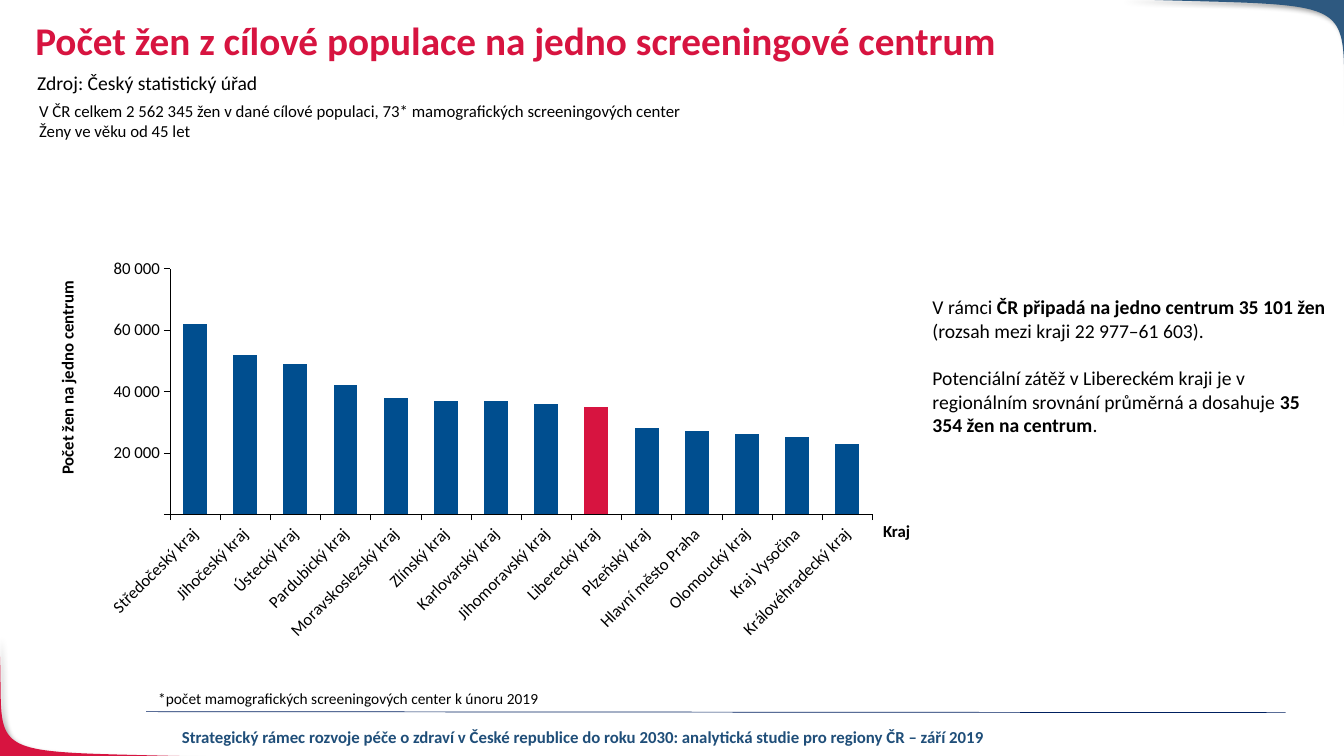
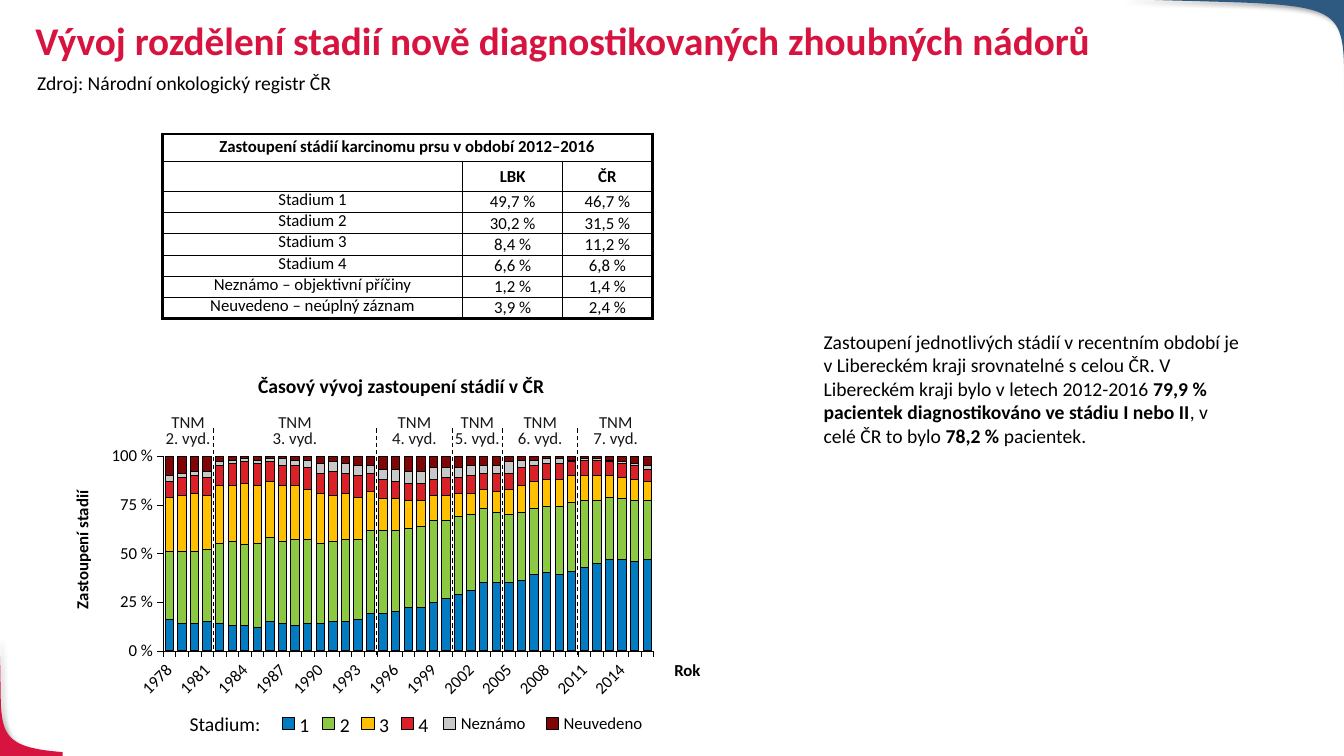
from lxml import etree
from pptx import Presentation
from pptx.chart.data import CategoryChartData
from pptx.dml.color import RGBColor
from pptx.enum.chart import XL_CHART_TYPE, XL_TICK_MARK
from pptx.enum.dml import MSO_LINE
from pptx.enum.shapes import MSO_CONNECTOR, MSO_SHAPE
from pptx.enum.text import MSO_ANCHOR, PP_ALIGN
from pptx.oxml import parse_xml
from pptx.oxml.ns import nsdecls, qn
from pptx.util import Inches, Pt

LEFT, CENTER = PP_ALIGN.LEFT, PP_ALIGN.CENTER
TOP, MIDDLE, BOTTOM = MSO_ANCHOR.TOP, MSO_ANCHOR.MIDDLE, MSO_ANCHOR.BOTTOM
CLUSTERED, STACKED = XL_CHART_TYPE.COLUMN_CLUSTERED, XL_CHART_TYPE.COLUMN_STACKED_100
STRAIGHT, RECTANGLE = MSO_CONNECTOR.STRAIGHT, MSO_SHAPE.RECTANGLE
DASH, TICK_OUT = MSO_LINE.DASH, XL_TICK_MARK.OUTSIDE

FONT = "Calibri"
RED, BLUE, NAVY, FOOTER_BLUE = "D71440", "2E5980", "002060", "1F4E79"
BAR_BLUE, BLACK, WHITE, TNM_GREY = "004E8F", "000000", "FFFFFF", "181717"
NORMAL, LARGE, TITLE = 12, 14, 28
NO_INSET = (0, 0)
THIN, THICK = 1, 2.25

# Curved edge of a corner, in shares of its width and height
CORNER_CURVE = [(0, 0), (1.16, 0.06), (0.96, -0.06), (1, 1)]
# colour, start of the curve, signed width and height
CORNERS = [(RED, 2.13, 7.51, -2.14, -1.21), (BLUE, 11.11, -0.01, 2.24, 1.43)]
FOOTER = ("Strategický rámec rozvoje péče o zdraví v České republice do roku 2030: "
          "analytická studie pro regiony ČR – září 2019")

CENTRE_LOAD = {
    "Středočeský kraj": 62000, "Jihočeský kraj": 52000, "Ústecký kraj": 49000,
    "Pardubický kraj": 42000, "Moravskoslezský kraj": 38000, "Zlínský kraj": 37000,
    "Karlovarský kraj": 37000, "Jihomoravský kraj": 36000, "Liberecký kraj": 35000,
    "Plzeňský kraj": 28000, "Hlavní město Praha": 27000, "Olomoucký kraj": 26000,
    "Kraj Vysočina": 25000, "Královéhradecký kraj": 23000,
}
HIGHLIGHTED_REGION = "Liberecký kraj"
LOAD_COMMENT = [
    [("V rámci ", False), ("ČR připadá na jedno centrum 35 101 žen ", True),
     ("(rozsah mezi kraji 22 977–61 603).", False)],
    [("Potenciální zátěž v Libereckém kraji je v regionálním srovnání průměrná a dosahuje", False),
     (" 35 354 žen na centrum", True), (".", False)],
]

STAGE_TABLE = [
    ("Zastoupení stádií karcinomu prsu v období 2012–2016", "", ""),
    ("", "LBK", "ČR"),
    ("Stadium 1", "49,7 %", "46,7 %"),
    ("Stadium 2", "30,2 %", "31,5 %"),
    ("Stadium 3", "8,4 %", "11,2 %"),
    ("Stadium 4", "6,6 %", "6,8 %"),
    ("Neznámo – objektivní příčiny", "1,2 %", "1,4 %"),
    ("Neuvedeno – neúplný záznam", "3,9 %", "2,4 %"),
]
COLUMN_WIDTHS = [2.98, 0.99, 0.89]
ROW_HEIGHTS = [0.27, 0.3] + [0.21] * 6

YEARS = range(1978, 2017)
# name, fill, legend left, yearly shares
STAGES = [
    ("1", "037BC1", 2.8,
     [16, 14, 14, 15, 14, 13, 13, 12, 15, 14, 13, 14, 14, 15, 15, 16, 19, 19, 20, 22,
      22, 25, 27, 29, 31, *[35] * 3, 36, 39, 40, 39, 41, 43, 45, 47, 47, 46, 47]),
    ("2", "8CC841", 3.2,
     [35, *[37] * 3, 41, 43, 42, 43, 43, 42, 44, 43, 41, 41, 42, 41, 43, 43, 42, 41,
      42, 42, 40, 40, 39, 38, 36, 35, 35, 34, 34, 35, 35, 34, 32, 32, 31, 31, 30]),
    ("3", "FFC000", 3.59,
     [28, 29, 30, 28, 30, 29, 32, 30, 29, 29, 28, 26, 26, 24, 24, 22, 20, 16, 16, 14,
      *[13] * 3, 12, 11, 10, 11, 13, *[14] * 5, 13, 13, *[11] * 3, 10]),
    ("4", "DA2128", 3.98,
     [8, *[9] * 3, 10, *[11] * 3, *[10] * 3, 11, 10, 12, 10, 11, 9, 10, 9, 9,
      *[9, 8] * 5, 8, 8, 7, 8, 8, *[7] * 3, 6]),
    ("Neznámo", "C8C8C8", 4.4,
     [3, 2, 2, 3, *[2] * 5, 4, 3, 4, *[5] * 4, 4, 5, *[6] * 4, *[5] * 3, 4, 4, 6, 4,
      *[3] * 3, *[1] * 6, 2]),
]
# The last stage takes what is left to 100 %, at least one per cent
unstated = [max(1, 100 - sum(shares)) for shares in zip(*(stage[-1] for stage in STAGES))]
STAGES.append(("Neuvedeno", "7F0506", 5.42, unstated))
# first year of each TNM edition
TNM_EDITIONS = {2: 1978, 3: 1982, 4: 1995, 5: 2001, 6: 2005, 7: 2011}


def rgb(value):
    return RGBColor.from_string(value)


def inches(values):
    return [Inches(v) for v in values]


def write(frame, paragraphs, size=NORMAL, bold=False, color=BLACK, align=LEFT,
          inset=(0.1, 0.05), line=None, gap=None):
    """Fill a text frame; a paragraph is a string or a list of (text, bold) runs."""
    side, edge = inches(inset)
    frame_format = dict(word_wrap=True, vertical_anchor=TOP, margin_left=side,
                        margin_right=side, margin_top=edge, margin_bottom=edge)
    for name, value in frame_format.items():
        setattr(frame, name, value)
    for i, runs in enumerate(paragraphs):
        paragraph = frame.add_paragraph() if i else frame.paragraphs[0]
        paragraph.alignment = align
        if line:
            paragraph.line_spacing = line
        if i and gap:
            paragraph.space_before = Pt(gap)
        for content, strong in [(runs, bold)] if isinstance(runs, str) else runs:
            run = paragraph.add_run()
            run.text = content
            for name, value in dict(name=FONT, size=Pt(size), bold=strong).items():
                setattr(run.font, name, value)
            run.font.color.rgb = rgb(color)


def add_text(slide, left, top, width, paragraphs, rotation=0, **style):
    textbox = slide.shapes.add_textbox(*inches((left, top, width, 0.3)))
    textbox.rotation = rotation
    write(textbox.text_frame, paragraphs, **style)


def add_line(slide, start, end, color, width, dash=None):
    line = slide.shapes.add_connector(STRAIGHT, *inches(start + end))
    line.line.color.rgb = rgb(color)
    line.line.width = Pt(width)
    if dash:
        line.line.dash_style = dash
    etree.SubElement(line._element.spPr, qn("a:effectLst"))


def fill_with(part, color):
    part.fill.solid()
    part.fill.fore_color.rgb = rgb(color)


def outline_with(part, width):
    part.line.color.rgb = rgb(BLACK)
    part.line.width = Pt(width)


def add_rectangle(slide, box, fill):
    rectangle = slide.shapes.add_shape(RECTANGLE, *inches(box))
    rectangle.shadow.inherit = False
    fill_with(rectangle, fill)
    rectangle.line.fill.background()
    return rectangle


def add_corner(slide, color, left, top, width, height, steps=60):
    def place(x, y):
        return inches((left + x * width, top + y * height))

    points = []
    for t in (i / steps for i in range(steps + 1)):
        weights = ((1 - t) ** 3, 3 * t * (1 - t) ** 2, 3 * t * t * (1 - t), t ** 3)
        points.append(place(*(sum(w * v for w, v in zip(weights, values))
                              for values in zip(*CORNER_CURVE))))
    builder = slide.shapes.build_freeform(*points[0])
    builder.add_line_segments(points[1:] + [place(1, 0)], close=True)
    shape = builder.convert_to_shape()
    fill_with(shape, color)
    shape.line.fill.background()
    shape.shadow.inherit = False
    shape._element.spPr.find(qn("a:effectLst")).append(parse_xml(
        f'<a:outerShdw {nsdecls("a")} blurRad="{Pt(4)}" dist="{Pt(3)}" dir="2700000">'
        '<a:srgbClr val="000000"><a:alpha val="40000"/></a:srgbClr></a:outerShdw>'))


def start_slide(prs, title, source):
    slide = prs.slides.add_slide(prs.slide_layouts[5])
    for corner in CORNERS:
        add_corner(slide, *corner)
    heading = slide.shapes.title
    places = dict(left=0.25, top=0.16, width=11.5, height=0.69)
    for name, value in places.items():
        setattr(heading, name, Inches(value))
    write(heading.text_frame, [title], size=TITLE, bold=True, color=RED, line=0.9)
    add_text(slide, 0.27, 0.65, 8.5, [source], size=LARGE)
    return slide


def add_columns(slide, kind, box, plot_box, categories, series, gap, number_format,
                major, axis_width):
    """Add a column chart without title, legend or gridlines."""
    data = CategoryChartData()
    data.categories = categories
    for name, values in series:
        data.add_series(name, values)
    chart = slide.shapes.add_chart(kind, *inches(box), data).chart
    chart.has_title = chart.has_legend = False
    for name, value in dict(name=FONT, size=Pt(NORMAL), bold=False).items():
        setattr(chart.font, name, value)
    chart.font.color.rgb = rgb(BLACK)
    plot = chart.plots[0]
    plot.gap_width = gap
    plot.vary_by_categories = False
    for axis in (chart.category_axis, chart.value_axis):
        axis.has_major_gridlines = False
        axis.major_tick_mark = TICK_OUT
        outline_with(axis.format, axis_width)
        axis.tick_labels.font.size = Pt(NORMAL)
    chart.value_axis.major_unit = major
    chart.value_axis.tick_labels.number_format = number_format
    chart.value_axis.tick_labels.number_format_is_linked = False
    labels = chart.category_axis._element.find(qn("c:txPr"))
    labels.find(qn("a:bodyPr")).set("rot", "-2700000")
    area = chart._chartSpace.find(qn("c:chart")).find(qn("c:plotArea"))
    for old in area.findall(qn("c:layout")):
        area.remove(old)
    places = "".join(f'<c:{tag} val="{value}"/>' for tag, value in zip("xywh", plot_box))
    area.insert(0, parse_xml(
        f'<c:layout {nsdecls("c")}><c:manualLayout><c:layoutTarget val="inner"/>'
        f'<c:xMode val="edge"/><c:yMode val="edge"/>{places}</c:manualLayout></c:layout>'))
    return chart


def set_borders(cell, widths):
    properties = cell._tc.get_or_add_tcPr()
    for i, (side, width) in enumerate(zip("LRTB", widths)):
        properties.insert(i, parse_xml(
            f'<a:ln{side} {nsdecls("a")} w="{Pt(width)}"><a:solidFill>'
            f'<a:srgbClr val="{BLACK}"/></a:solidFill></a:ln{side}>'))


def add_stage_table(slide, left, top):
    last_row, last_col = len(ROW_HEIGHTS) - 1, len(COLUMN_WIDTHS) - 1
    size = (sum(COLUMN_WIDTHS), sum(ROW_HEIGHTS))
    table = slide.shapes.add_table(last_row + 1, last_col + 1,
                                   *inches((left, top) + size)).table
    table.first_row = table.horz_banding = False
    for column, width in zip(table.columns, COLUMN_WIDTHS):
        column.width = Inches(width)
    for row, height in zip(table.rows, ROW_HEIGHTS):
        row.height = Inches(height)
    table.cell(0, 0).merge(table.cell(0, last_col))
    for r, row in enumerate(STAGE_TABLE):
        for c, content in enumerate(row):
            cell = table.cell(r, c)
            cell.fill.background()
            outer = (c == 0, c == last_col or r == 0, r == 0, r == last_row)
            set_borders(cell, [THICK if edge else THIN for edge in outer])
            if not content:
                etree.SubElement(cell.text_frame.paragraphs[0]._p,
                                 qn("a:endParaRPr"), sz="1200")
                continue
            if c:
                anchor, inset, line = MIDDLE, (0.01, 0), None
            else:
                anchor, inset, line = (BOTTOM, (0.1, 0.05), 0.55) if r else (TOP, (0.1, 0.05), 0.8)
            write(cell.text_frame, [content], bold=r < 2, align=CENTER, line=line)
            cell.vertical_anchor = anchor
            side, edge = inches(inset)
            cell.margin_left = cell.margin_right = side
            cell.margin_top = cell.margin_bottom = edge


def build_load_slide(prs):
    slide = start_slide(prs, "Počet žen z cílové populace na jedno screeningové centrum",
                        "Zdroj: Český statistický úřad")
    add_line(slide, (1.45, 7.06), (12.75, 7.07), NAVY, 0.5)
    add_text(slide, 1.57, 7.16, 8.43, [FOOTER], bold=True, color=FOOTER_BLUE, align=CENTER)
    add_text(slide, 0.29, 0.95, 7.34, [
        "V ČR celkem 2 562 345 žen v dané cílové populaci, 73* mamografických screeningových center",
        "Ženy ve věku od 45 let"])
    regions = list(CENTRE_LOAD)
    chart = add_columns(slide, CLUSTERED, (0.98, 2.17, 7.83, 4.51), (0.09, 0.11, 0.89, 0.54),
                        regions, [("Počet žen", list(CENTRE_LOAD.values()))],
                        110, "###\\ ###", 20000, 0.25)
    chart.value_axis.minimum_scale, chart.value_axis.maximum_scale = 0, 80000
    bars = chart.plots[0].series[0]
    fill_with(bars.format, BAR_BLUE)
    fill_with(bars.points[regions.index(HIGHLIGHTED_REGION)].format, RED)
    add_text(slide, 8.66, 5.12, 1, ["Kraj"], bold=True)
    add_text(slide, -0.41, 3.6, 2.15, ["Počet žen na jedno centrum"], rotation=270,
             bold=True, align=CENTER)
    add_text(slide, 1.47, 6.79, 4.5,
             ["*počet mamografických screeningových center k únoru 2019"], size=11)
    add_text(slide, 9.15, 2.88, 4.18, LOAD_COMMENT, size=LARGE, gap=17)


def build_stage_slide(prs):
    slide = start_slide(prs, "Vývoj rozdělení stadií nově diagnostikovaných zhoubných nádorů",
                        "Zdroj: Národní onkologický registr ČR")
    add_rectangle(slide, (0.62, 6.86, 12.71, 0.64), WHITE)
    box, plot_box = (0.75, 4.35, 5.89, 2.68), (0.147, 0.065, 0.826, 0.721)
    chart = add_columns(slide, STACKED, box, plot_box, [str(year) for year in YEARS],
                        [(stage[0], stage[-1]) for stage in STAGES], 50, "0\\ %", 0.25, 0.13)
    chart.plots[0].overlap = 100
    skip = parse_xml(f'<c:tickLblSkip {nsdecls("c")} val="3"/>')
    chart.category_axis._element.find(qn("c:noMultiLvlLbl")).addprevious(skip)
    add_text(slide, 1.88, 7.06, 0.85, ["Stadium:"], size=LARGE, inset=NO_INSET)
    for bars, (name, color, left, _) in zip(chart.plots[0].series, STAGES):
        fill_with(bars.format, color)
        outline_with(bars.format, 0.5)
        outline_with(add_rectangle(slide, (left, 7.12, 0.12, 0.12), color), 0.75)
        add_text(slide, left + 0.17, 7.07, 0.85, [name], inset=NO_INSET,
                 size=LARGE if name.isdigit() else NORMAL)

    plot_left, plot_width = box[0] + plot_box[0] * box[2], plot_box[2] * box[2]
    starts = [plot_left + YEARS.index(first) * plot_width / len(YEARS)
              for first in TNM_EDITIONS.values()]
    ends = starts[1:] + [plot_left + plot_width]
    for edition, start, end in zip(TNM_EDITIONS, starts, ends):
        add_text(slide, (start + end) / 2 - 0.3, 4.12, 0.6, ["TNM", f"{edition}. vyd."],
                 color=TNM_GREY, align=CENTER, inset=NO_INSET, line=0.8)
    for start in starts[1:]:
        add_line(slide, (start, 4.25), (start, 6.5), BLACK, 0.75, DASH)

    add_stage_table(slide, 1.61, 1.33)
    add_text(slide, 2.19, 3.66, 3.58, ["Časový vývoj zastoupení stádií v ČR"],
             size=LARGE, bold=True, align=CENTER)
    add_text(slide, -0.08, 5.1, 1.78, ["Zastoupení stadií"], rotation=270, bold=True)
    add_text(slide, 6.59, 6.5, 1, ["Rok"], bold=True)
    add_text(slide, 8.07, 3.22, 4.37, [[
        ("Zastoupení jednotlivých stádií v recentním období je v Libereckém kraji srovnatelné "
         "s celou ČR. V Libereckém kraji bylo v letech 2012-2016 ", False),
        ("79,9 % pacientek diagnostikováno ve stádiu I nebo II", True),
        (", v celé ČR to bylo ", False), ("78,2 %", True), (" pacientek.", False),
    ]], size=LARGE)


def main():
    prs = Presentation()
    prs.slide_width, prs.slide_height = inches((13.33, 7.5))
    build_load_slide(prs)
    build_stage_slide(prs)
    prs.save("out.pptx")


if __name__ == "__main__":
    main()
